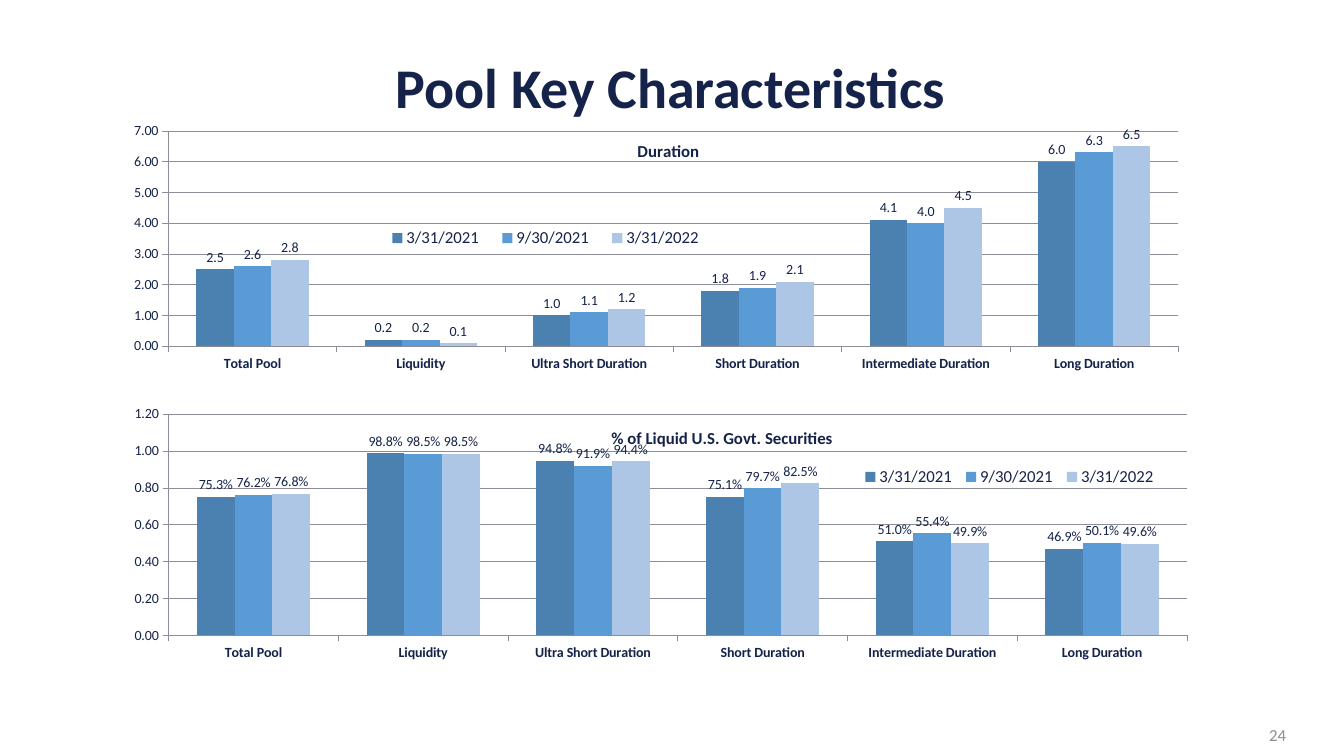
from lxml import etree
from pptx import Presentation
from pptx.chart.data import CategoryChartData
from pptx.dml.color import RGBColor
from pptx.enum.chart import (XL_CHART_TYPE, XL_LABEL_POSITION,
                             XL_LEGEND_POSITION, XL_TICK_MARK)
from pptx.enum.text import MSO_ANCHOR, MSO_AUTO_SIZE, PP_ALIGN
from pptx.oxml.ns import qn
from pptx.util import Pt

COLUMN = XL_CHART_TYPE.COLUMN_CLUSTERED
OUT_END = XL_LABEL_POSITION.OUTSIDE_END
RIGHT = XL_LEGEND_POSITION.RIGHT
OUTSIDE, NO_TICK = XL_TICK_MARK.OUTSIDE, XL_TICK_MARK.NONE
MIDDLE = MSO_ANCHOR.MIDDLE

PX = 914400 / 100.8
COLORS = {"navy": "15234A", "gray": "8C8D96", "3/31/2021": "4B81B1",
          "9/30/2021": "5B9BD5", "3/31/2022": "ADC6E5"}
DATES = ["3/31/2021", "9/30/2021", "3/31/2022"]
POOLS = ["Total Pool", "Liquidity", "Ultra Short Duration", "Short Duration",
         "Intermediate Duration", "Long Duration"]

# Boxes are left, top, width, height in px on the slide.
CHARTS = [
    {"title": "Duration", "box": (115, 116, 1110, 262),
     "title_at": (634, 137), "legend": (375, 226, 342, 24),
     "format": "#,##0.0", "top": 7, "step": 1,
     "rows": [(2.5, 0.2, 1.0, 1.8, 4.1, 6.0),
              (2.6, 0.2, 1.1, 1.9, 4.0, 6.3),
              (2.8, 0.1, 1.2, 2.1, 4.5, 6.5)]},
    {"title": "% of Liquid U.S. Govt. Securities", "box": (115, 399, 1119, 269),
     "title_at": (608, 424), "legend": (857, 465, 306, 24),
     "format": "0.0%", "top": 1.2, "step": 0.2,
     "rows": [(0.753, 0.988, 0.948, 0.751, 0.510, 0.469),
              (0.762, 0.985, 0.919, 0.797, 0.554, 0.501),
              (0.768, 0.985, 0.944, 0.825, 0.499, 0.496)]},
]


def style(font, size, color="navy", bold=False):
    font.name, font.size, font.bold = "Calibri", Pt(size), bold
    font.color.rgb = RGBColor.from_string(COLORS[color])


def place(node, index, values, inner=False):
    """Give a chart part a manual layout in fractions of the chart."""
    for old in node.findall(qn("c:layout")):
        node.remove(old)
    layout = etree.Element(qn("c:layout"))
    manual = etree.SubElement(layout, qn("c:manualLayout"))
    tags = [("layoutTarget", "inner")] if inner else []
    tags += [("xMode", "edge"), ("yMode", "edge")]
    tags += [(tag, f"{value:.3f}") for tag, value in zip("xywh", values)]
    for tag, value in tags:
        etree.SubElement(manual, qn("c:" + tag)).set("val", value)
    node.insert(index, layout)


deck = Presentation()
deck.slide_width, deck.slide_height = round(1344 * PX), round(756 * PX)
slide = deck.slides.add_slide(deck.slide_layouts[5])

title = slide.shapes.title
title.left, title.top, title.width, title.height = (
    round(v * PX) for v in (91, 53, 1159, 74))
frame = title.text_frame
frame.text = "Pool Key Characteristics"
frame.auto_size = MSO_AUTO_SIZE.NONE
frame.vertical_anchor = MIDDLE
head = frame.paragraphs[0]
head.alignment, head.line_spacing = PP_ALIGN.CENTER, 0.9
style(head.runs[0].font, 40, bold=True)

for item in CHARTS:
    data = CategoryChartData()
    data.categories = POOLS
    for date, row in zip(DATES, item["rows"]):
        data.add_series(date, row)
    left, top, width, height = item["box"]
    chart = slide.shapes.add_chart(
        COLUMN, *(round(v * PX) for v in item["box"]), data).chart
    style(chart.font, 10)

    chart.has_title = True
    name = chart.chart_title.text_frame
    name.text = item["title"]
    style(name.paragraphs[0].runs[0].font, 12, bold=True)
    x, y = item["title_at"]
    root = chart.element
    place(root.find(".//" + qn("c:title")), 1,
          ((x - left) / width, (y - top) / height))

    chart.has_legend = True
    legend = chart.legend
    legend.position = RIGHT
    legend.include_in_layout = False
    style(legend.font, 12)
    x, y, wide, high = item["legend"]
    place(root.find(".//" + qn("c:legend")), 1,
          ((x - left) / width, (y - top) / height, wide / width, high / height))
    place(root.find(".//" + qn("c:plotArea")), 0,
          (0.048, 0.057, 0.91, 0.822), inner=True)

    pools, scale = chart.category_axis, chart.value_axis
    scale.minimum_scale, scale.maximum_scale = 0, item["top"]
    scale.major_unit = item["step"]
    scale.has_major_gridlines = True
    scale.tick_labels.number_format = "#,##0.00"
    scale.tick_labels.number_format_is_linked = False
    for axis in (pools, scale):
        axis.major_tick_mark, axis.minor_tick_mark = OUTSIDE, NO_TICK
        style(axis.tick_labels.font, 10, bold=axis is pools)
    for part in (pools, scale, scale.major_gridlines):
        part.format.line.width = Pt(0.5)
        part.format.line.color.rgb = RGBColor.from_string(COLORS["gray"])

    plot = chart.plots[0]
    plot.gap_width, plot.overlap = 150, 0
    plot.vary_by_categories = False
    for bars in plot.series:
        bars.format.fill.solid()
        bars.format.fill.fore_color.rgb = RGBColor.from_string(COLORS[bars.name])
        labels = bars.data_labels
        labels.show_value = True
        labels.position = OUT_END
        labels.number_format = item["format"]
        labels.number_format_is_linked = False
        style(labels.font, 10)

page = slide.shapes.add_textbox(*(round(v * PX) for v in (994, 715, 302, 40)))
frame = page.text_frame
frame.word_wrap = True
frame.vertical_anchor = MIDDLE
frame.text = "24"
frame.paragraphs[0].alignment = PP_ALIGN.RIGHT
style(frame.paragraphs[0].runs[0].font, 12, "gray")

deck.save("out.pptx")
